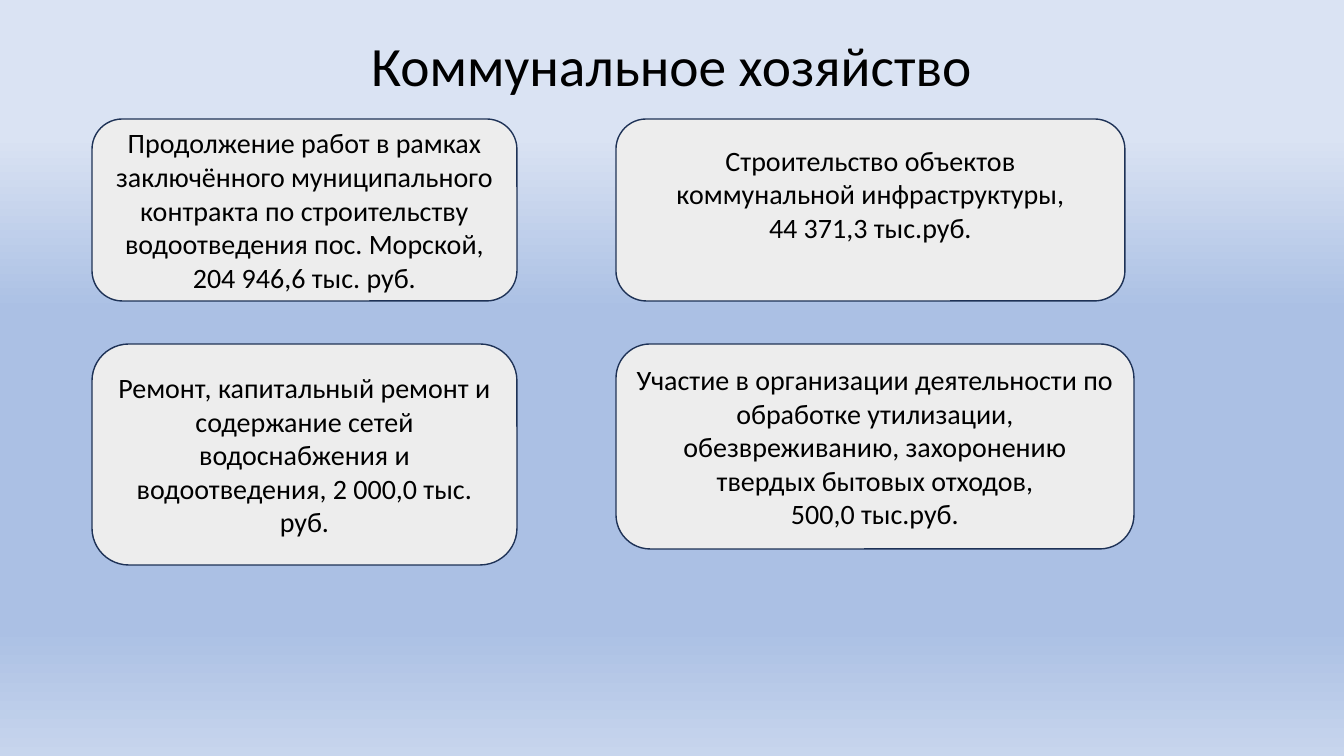
from dataclasses import dataclass

from lxml.etree import SubElement
from pptx import Presentation
from pptx.dml.color import RGBColor
from pptx.enum.shapes import MSO_SHAPE
from pptx.enum.text import MSO_ANCHOR, PP_ALIGN
from pptx.oxml.ns import qn
from pptx.util import Pt

EMU_PER_PX = 914400 / 100.8


@dataclass(frozen=True)
class Theme:
    font: str = "Calibri"
    title_size: float = 39.6
    card_size: float = 20
    ink: str = "000000"
    card_fill: str = "EDEDED"
    card_line: str = "1E3256"
    backdrop: tuple = ((18, "DAE3F3"), (41, "ABC0E4"), (83, "ABC0E4"), (100, "C7D5ED"))


THEME = Theme()
LEFT, RIGHT = 92, 616
TOP, BOTTOM = 119, 344

CARDS = (
    ((LEFT, TOP, 425, 182), 5,
     ("Продолжение работ в рамках заключённого муниципального контракта "
      "по строительству водоотведения пос. Морской,",
      "204 946,6 тыс. руб.")),
    ((RIGHT, TOP, 509, 182), 38,
     ("Строительство объектов коммунальной инфраструктуры,",
      "44 371,3 тыс.руб.")),
    ((LEFT, BOTTOM, 425, 221), 5,
     ("Ремонт, капитальный ремонт и содержание сетей водоснабжения "
      "и водоотведения, 2 000,0 тыс. руб.",)),
    ((RIGHT, BOTTOM, 518, 205), 5,
     ("Участие в организации деятельности по обработке утилизации, "
      "обезвреживанию, захоронению твердых бытовых отходов,",
      "500,0 тыс.руб.")),
)


def px(length):
    return round(length * EMU_PER_PX)


def paint_backdrop(slide):
    fill = slide.background.fill
    fill.gradient()
    fill.gradient_angle = 270
    stops = slide.element.find(".//" + qn("a:gsLst"))
    stops.clear()
    for percent, colour in THEME.backdrop:
        stop = SubElement(stops, qn("a:gs"), pos=str(percent * 1000))
        SubElement(stop, qn("a:srgbClr"), val=colour)


def write_centred(frame, lines, size, spacing=1.0):
    frame.word_wrap = True
    frame.vertical_anchor = MSO_ANCHOR.MIDDLE
    frame.text = "\n".join(lines)
    for paragraph in frame.paragraphs:
        paragraph.alignment = PP_ALIGN.CENTER
        paragraph.line_spacing = spacing
        for run in paragraph.runs:
            run.font.name = THEME.font
            run.font.size = Pt(size)
            run.font.color.rgb = RGBColor.from_string(THEME.ink)


def add_title(slide, wording):
    title = slide.shapes.add_textbox(*map(px, (92, 40, 1159, 57)))
    write_centred(title.text_frame, [wording], THEME.title_size, 0.9)


def add_card(slide, bounds, bottom_inset, lines):
    card = slide.shapes.add_shape(MSO_SHAPE.ROUNDED_RECTANGLE, *map(px, bounds))
    card.shadow.inherit = False
    card.fill.solid()
    card.fill.fore_color.rgb = RGBColor.from_string(THEME.card_fill)
    card.line.color.rgb = RGBColor.from_string(THEME.card_line)
    card.line.width = Pt(1)
    card.text_frame.margin_bottom = px(bottom_inset)
    write_centred(card.text_frame, lines, THEME.card_size)


def main():
    deck = Presentation()
    deck.slide_width, deck.slide_height = px(1344), px(756)
    slide = deck.slides.add_slide(deck.slide_layouts[6])
    paint_backdrop(slide)
    add_title(slide, "Коммунальное хозяйство")
    for bounds, bottom_inset, lines in CARDS:
        add_card(slide, bounds, bottom_inset, lines)
    deck.save("out.pptx")


if __name__ == "__main__":
    main()
